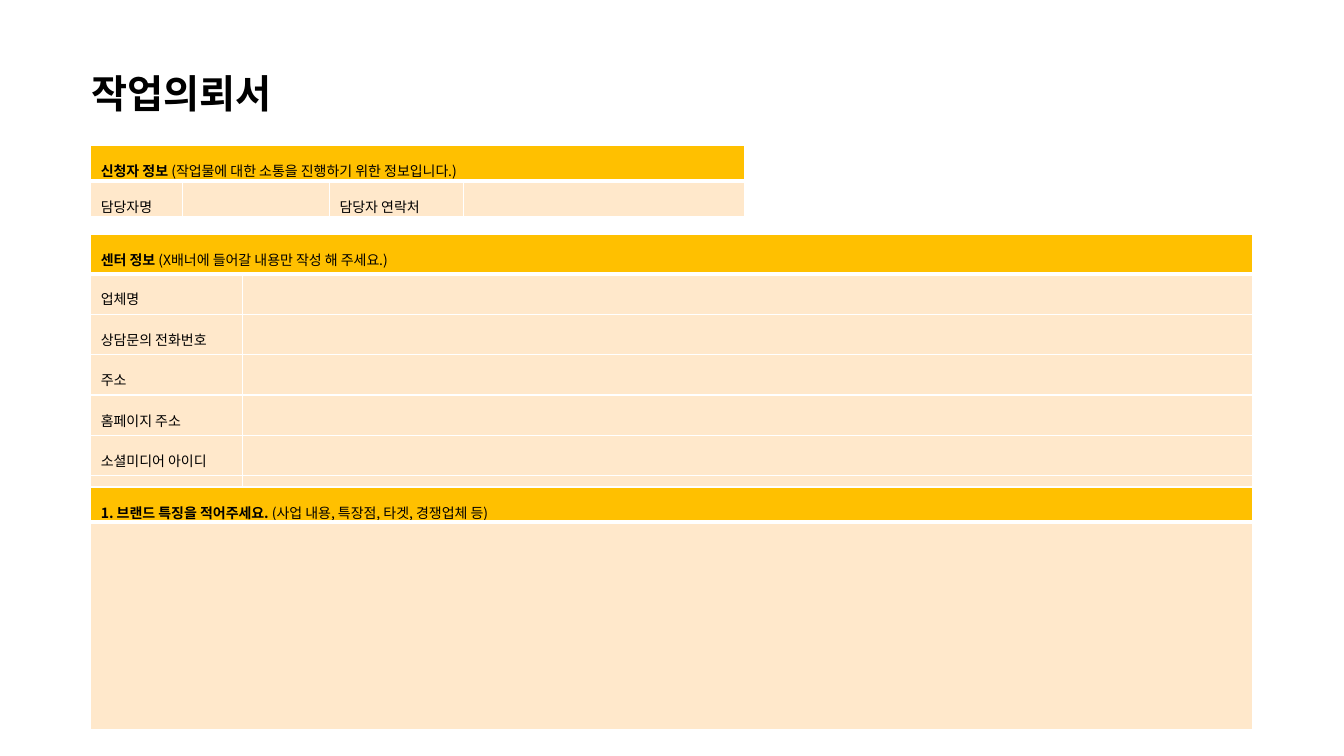
from dataclasses import dataclass

from pptx import Presentation
from pptx.dml.color import RGBColor
from pptx.enum.text import MSO_AUTO_SIZE
from pptx.oxml.ns import qn
from pptx.slide import Slide
from pptx.table import _Cell
from pptx.text.text import _Paragraph, _Run
from pptx.util import Pt
from lxml.etree import SubElement


@dataclass(frozen=True)
class Theme:
    font: str = "Noto Sans CJK KR"
    ink: str = "000000"
    header: str = "FFC000"
    body: str = "FFE8CB"
    border: str = "FFFFFF"
    title_size: float = 28
    text_size: float = 10
    line_spacing: float = 1.5
    thin: float = 1
    thick: float = 3


@dataclass(frozen=True)
class FormTable:
    top: float
    heading: str
    hint: str
    columns: tuple[float, ...]
    heights: tuple[float, ...]
    rows: tuple[tuple[str, ...], ...]


THEME = Theme()
LEFT = 64.8

FORM_TABLES = (
    FormTable(
        top=167.3,
        heading="센터 정보 ",
        hint="(X배너에 들어갈 내용만 작성 해 주세요.)",
        columns=(108.7, 721.5),
        heights=(28.2,) + (28.9,) * 6,
        rows=tuple(
            (label, "")
            for label in (
                "업체명",
                "상담문의 전화번호",
                "주소",
                "홈페이지 주소",
                "소셜미디어 아이디",
                "",
            )
        ),
    ),
    FormTable(
        top=103.7,
        heading="신청자 정보 ",
        hint="(작업물에 대한 소통을 진행하기 위한 정보입니다.)",
        columns=(65.5, 105.1, 95.8, 200.9),
        heights=(25.7, 25.3),
        rows=(("담당자명", "", "담당자 연락처", ""),),
    ),
    FormTable(
        top=347.8,
        heading="1. 브랜드 특징을 적어주세요. ",
        hint="(사업 내용, 특장점, 타겟, 경쟁업체 등)",
        columns=(830.2,),
        heights=(25.3, 147.8),
        rows=(("",),),
    ),
)


def format_span(span: _Run, size: float, bold: bool) -> None:
    span.font.name = THEME.font
    span.font.size = Pt(size)
    span.font.bold = bold
    span.font.color.rgb = RGBColor.from_string(THEME.ink)
    properties = span._r.get_or_add_rPr()
    SubElement(properties, qn("a:ea"), typeface=THEME.font)


def add_span(para: _Paragraph, text: str, size: float, bold: bool = False) -> None:
    span = para.add_run()
    span.text = text
    format_span(span, size, bold)


def set_borders(cell: _Cell, top: float, bottom: float) -> None:
    properties = cell._tc.get_or_add_tcPr()
    widths = {"lnL": THEME.thin, "lnR": THEME.thin, "lnT": top, "lnB": bottom}
    for side, width in widths.items():
        line = SubElement(properties, qn(f"a:{side}"), w=str(Pt(width)))
        fill = SubElement(line, qn("a:solidFill"))
        SubElement(fill, qn("a:srgbClr"), val=THEME.border)


def style_cell(cell: _Cell, row: int) -> None:
    set_borders(
        cell,
        top=THEME.thick if row == 1 else THEME.thin,
        bottom=THEME.thick if row == 0 else THEME.thin,
    )
    cell.margin_bottom = Pt(0)
    cell.fill.solid()
    color = THEME.header if row == 0 else THEME.body
    cell.fill.fore_color.rgb = RGBColor.from_string(color)


def fill_cell(cell: _Cell, text: str) -> None:
    para = cell.text_frame.paragraphs[0]
    if text:
        para.line_spacing = THEME.line_spacing
        add_span(para, text, THEME.text_size)
    else:
        size = str(int(THEME.text_size * 100))
        SubElement(para._p, qn("a:endParaRPr"), sz=size)


def add_form_table(page: Slide, form: FormTable) -> None:
    frame = page.shapes.add_table(
        len(form.heights),
        len(form.columns),
        Pt(LEFT),
        Pt(form.top),
        Pt(sum(form.columns)),
        Pt(sum(form.heights)),
    )
    table = frame.table
    table.first_row = False
    table.horz_banding = False
    for column, width in zip(table.columns, form.columns):
        column.width = Pt(width)
    for index, (row, height) in enumerate(zip(table.rows, form.heights)):
        row.height = Pt(height)
        for cell in row.cells:
            style_cell(cell, index)

    header = table.cell(0, 0)
    if len(form.columns) > 1:
        header.merge(table.cell(0, len(form.columns) - 1))
    para = header.text_frame.paragraphs[0]
    para.line_spacing = THEME.line_spacing
    add_span(para, form.heading, THEME.text_size, bold=True)
    add_span(para, form.hint, THEME.text_size)

    for row_index, labels in enumerate(form.rows, start=1):
        for column_index, label in enumerate(labels):
            fill_cell(table.cell(row_index, column_index), label)


def add_title(page: Slide, text: str) -> None:
    box = page.shapes.add_textbox(Pt(58.3), Pt(46.1), Pt(156.2), Pt(41))
    box.text_frame.word_wrap = False
    box.text_frame.auto_size = MSO_AUTO_SIZE.SHAPE_TO_FIT_TEXT
    add_span(box.text_frame.paragraphs[0], text, THEME.title_size, bold=True)


def main() -> None:
    deck = Presentation()
    deck.slide_width = Pt(960)
    deck.slide_height = Pt(540)
    page = deck.slides.add_slide(deck.slide_layouts[6])
    add_title(page, "작업의뢰서")
    for form in FORM_TABLES:
        add_form_table(page, form)
    deck.save("out.pptx")


if __name__ == "__main__":
    main()
